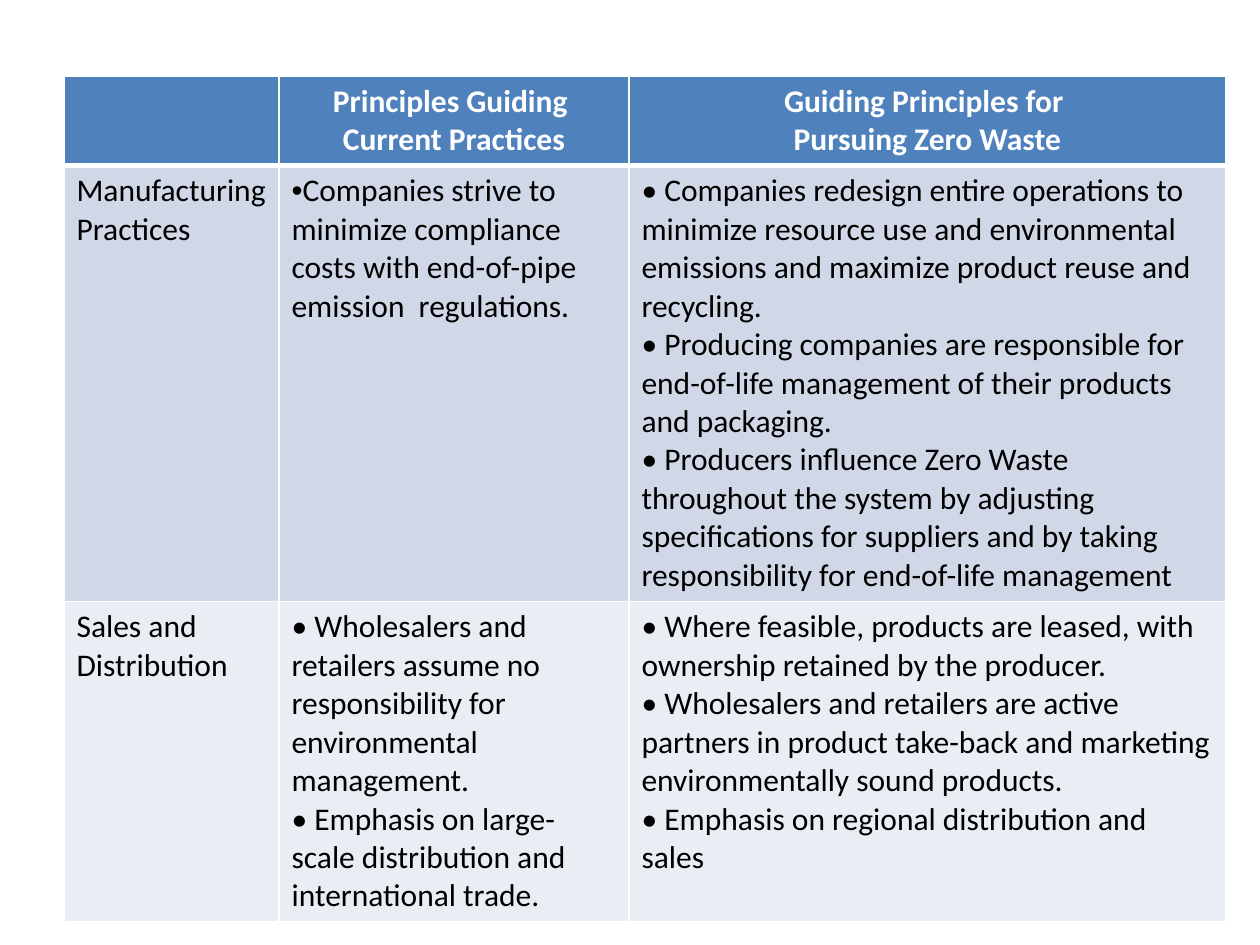
from lxml.etree import SubElement as Sub
from pptx import Presentation
from pptx.dml.color import RGBColor as RGB
from pptx.enum.text import PP_ALIGN as Align
from pptx.oxml import parse_xml
from pptx.oxml.ns import nsdecls, qn
from pptx.util import Emu, Pt

SCALE = 914400 / 126
FONT, SIZE = "Calibri", 18
COLORS = {"head": "4F81BD", "dark": "D0D8E8", "light": "E9EDF4",
          "line": "FFFFFF", "white": "FFFFFF", "text": "000000"}
FILLS = ["head", "dark", "light"]
COLS = [215, 350, 597]
ROWS = [88, 436, 320]

# Each cell is a list of paragraphs
CELLS = [
    [[],
     ["Principles Guiding ", "Current Practices"],
     ["Guiding Principles for ", "Pursuing Zero Waste"]],
    [["Manufacturing", "Practices"],
     ["Companies strive to minimize compliance costs with end-of-pipe "
      "emission  regulations."],
     ["• Companies redesign entire operations to minimize resource use "
      "and environmental",
      "emissions and maximize product reuse and recycling.",
      "• Producing companies are responsible for end-of-life management "
      "of their products",
      "and packaging.",
      "• Producers influence Zero Waste throughout the system by adjusting "
      "specifications for suppliers and by taking responsibility for "
      "end-of-life management"]],
    [["Sales and", "Distribution"],
     ["• Wholesalers and retailers assume no responsibility for "
      "environmental management.",
      "• Emphasis on large-scale distribution and international trade."],
     ["• Where feasible, products are leased, with ownership retained by "
      "the producer.",
      "• Wholesalers and retailers are active partners in product take-back "
      "and marketing environmentally sound products.",
      "• Emphasis on regional distribution and sales"]],
]


def px(n):
    return Emu(round(n * SCALE))


def border(cell, top, bottom):
    """Draw the four sides; widths are in points."""
    props = cell._tc.get_or_add_tcPr()
    sides = {"L": 1, "R": 1, "T": top, "B": bottom}
    for i, (side, width) in enumerate(sides.items()):
        props.insert(i, parse_xml(
            f'<a:ln{side} {nsdecls("a")} w="{Pt(width)}"><a:solidFill>'
            f'<a:srgbClr val="{COLORS["line"]}"/></a:solidFill></a:ln{side}>'))


def bullet(para):
    props = para._p.get_or_add_pPr()
    Sub(props, qn("a:buFont")).set("typeface", "Arial")
    Sub(props, qn("a:buChar")).set("char", "•")


def write(cell, lines, head):
    frame = cell.text_frame
    for i, line in enumerate(lines):
        para = frame.add_paragraph() if i else frame.paragraphs[0]
        para.alignment = Align.CENTER if head else Align.LEFT
        run = para.add_run()
        run.text = line
        font = run.font
        font.name, font.size, font.bold = FONT, Pt(SIZE), head
        font.color.rgb = RGB.from_string(COLORS["white" if head else "text"])


def grid(slide):
    table = slide.shapes.add_table(len(ROWS), len(COLS), px(64), px(76),
                                   px(sum(COLS)), px(sum(ROWS))).table
    table.horz_banding = False
    for col, width in zip(table.columns, COLS):
        col.width = px(width)
    for r, row in enumerate(table.rows):
        row.height = px(ROWS[r])
        for cell, lines in zip(row.cells, CELLS[r]):
            cell.fill.solid()
            cell.fill.fore_color.rgb = RGB.from_string(COLORS[FILLS[r]])
            # A thick rule parts the header from the body
            border(cell, 3 if r == 1 else 1, 3 if r == 0 else 1)
            write(cell, lines, r == 0)
    return table


def main():
    deck = Presentation()
    deck.slide_width, deck.slide_height = px(1260), px(945)
    slide = deck.slides.add_slide(deck.slide_layouts[6])
    table = grid(slide)
    bullet(table.cell(1, 1).text_frame.paragraphs[0])
    deck.save("out.pptx")


if __name__ == "__main__":
    main()
